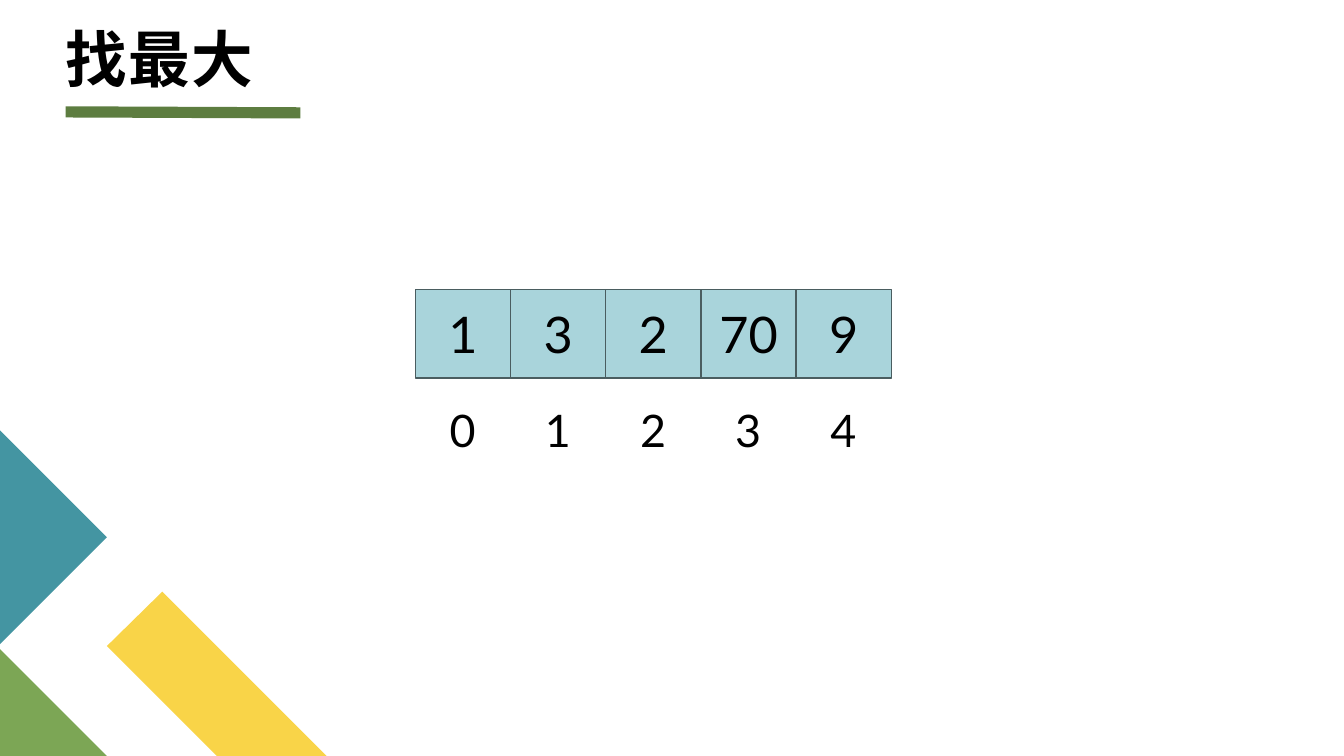
from dataclasses import dataclass

from lxml.etree import SubElement
from pptx import Presentation
from pptx.dml.color import RGBColor
from pptx.enum.shapes import MSO_CONNECTOR, MSO_SHAPE
from pptx.enum.text import MSO_ANCHOR, MSO_AUTO_SIZE, PP_ALIGN
from pptx.oxml.ns import qn
from pptx.slide import Slide
from pptx.text.text import TextFrame, _Run as Span
from pptx.util import Inches, Pt

COLORS = {
    "text": "000000",
    "underline": "5D7D40",
    "yellow": "F9D448",
    "green": "7CA655",
    "teal": "4495A2",
    "cell": "A9D4DB",
    "cell_border": "4A5D60",
}

VALUES = [1, 3, 2, 70, 9]
ROW_LEFT, ROW_TOP = 4.12, 2.87
ROW_WIDTH, ROW_HEIGHT = 4.72, 0.88
INDEX_TOP, INDEX_WIDTH, INDEX_HEIGHT = 3.95, 0.46, 0.64


@dataclass(frozen=True)
class Polygon:
    color: str
    corners: tuple[tuple[float, float], ...]


CORNER_SHAPES = [
    Polygon("yellow", ((3.24, 7.5), (2.15, 7.5), (1.06, 6.41), (1.61, 5.87))),
    Polygon("green", ((1.06, 7.5), (0, 7.5), (0, 6.44))),
    Polygon("teal", ((0, 4.27), (1.06, 5.33), (0, 6.39))),
]


def color(name: str) -> RGBColor:
    return RGBColor.from_string(COLORS[name])


def add_span(frame: TextFrame, text: str, font: str, size: float) -> Span:
    span = frame.paragraphs[0].add_run()
    span.text = text
    span.font.name = font
    span.font.size = Pt(size)
    span.font.color.rgb = color("text")
    return span


def add_polygon(page: Slide, polygon: Polygon) -> None:
    corners = [(Inches(x), Inches(y)) for x, y in polygon.corners]
    builder = page.shapes.build_freeform(*corners[0])
    builder.add_line_segments(corners[1:], close=True)
    shape = builder.convert_to_shape()
    shape.shadow.inherit = False
    shape.fill.solid()
    shape.fill.fore_color.rgb = color(polygon.color)
    shape.line.fill.background()


def add_title(page: Slide, text: str) -> None:
    """Add the bold heading and the rule beneath it."""
    rule = page.shapes.add_connector(
        MSO_CONNECTOR.STRAIGHT, Inches(0.65), Inches(1.11), Inches(2.98), Inches(1.12)
    )
    rule.line.color.rgb = color("underline")
    rule.line.width = Pt(8)
    SubElement(rule._element.spPr, qn("a:effectLst"))

    box = page.shapes.add_textbox(Inches(0.65), Inches(0.11), Inches(11.89), Inches(0.83))
    frame = box.text_frame
    frame.word_wrap = True
    frame.vertical_anchor = MSO_ANCHOR.BOTTOM
    frame.margin_left = frame.margin_right = frame.margin_top = frame.margin_bottom = 0
    frame.paragraphs[0].line_spacing = 0.8
    span = add_span(frame, text, "Cabin", 44)
    span.font.bold = True
    span._r.get_or_add_rPr().set("spc", "100")


def add_cell(page: Slide, left: float, width: float, value: int) -> None:
    cell = page.shapes.add_shape(
        MSO_SHAPE.RECTANGLE, Inches(left), Inches(ROW_TOP), Inches(width), Inches(ROW_HEIGHT)
    )
    cell.shadow.inherit = False
    cell.fill.solid()
    cell.fill.fore_color.rgb = color("cell")
    cell.line.color.rgb = color("cell_border")
    cell.line.width = Pt(1)
    frame = cell.text_frame
    frame.vertical_anchor = MSO_ANCHOR.MIDDLE
    frame.paragraphs[0].alignment = PP_ALIGN.CENTER
    add_span(frame, str(value), "Lato", 36)


def add_index(page: Slide, center: float, index: int) -> None:
    box = page.shapes.add_textbox(
        Inches(center - INDEX_WIDTH / 2), Inches(INDEX_TOP),
        Inches(INDEX_WIDTH), Inches(INDEX_HEIGHT),
    )
    box.text_frame.word_wrap = False
    box.text_frame.auto_size = MSO_AUTO_SIZE.SHAPE_TO_FIT_TEXT
    add_span(box.text_frame, str(index), "Lato", 32)


def add_array(page: Slide, values: list[int]) -> None:
    """Draw the values as a row of cells with their indexes below."""
    width = ROW_WIDTH / len(values)
    lefts = [ROW_LEFT + index * width for index in range(len(values))]
    for left, value in zip(lefts, values):
        add_cell(page, left, width, value)
    for index, left in enumerate(lefts):
        add_index(page, left + width / 2, index)


def main() -> None:
    deck = Presentation()
    deck.slide_width = Inches(13.33)
    deck.slide_height = Inches(7.5)
    page = deck.slides.add_slide(deck.slide_layouts[6])
    for polygon in CORNER_SHAPES:
        add_polygon(page, polygon)
    add_title(page, "找最大")
    add_array(page, VALUES)
    deck.save("out.pptx")


if __name__ == "__main__":
    main()
